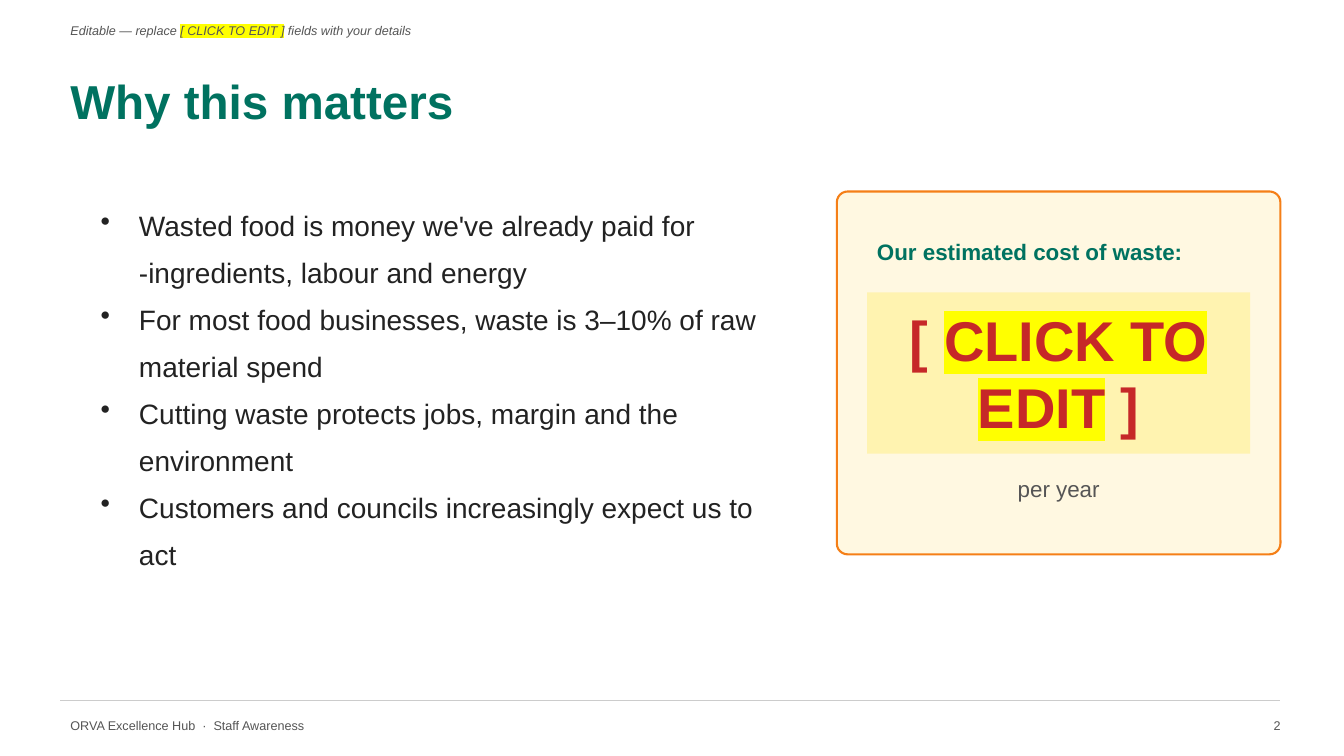
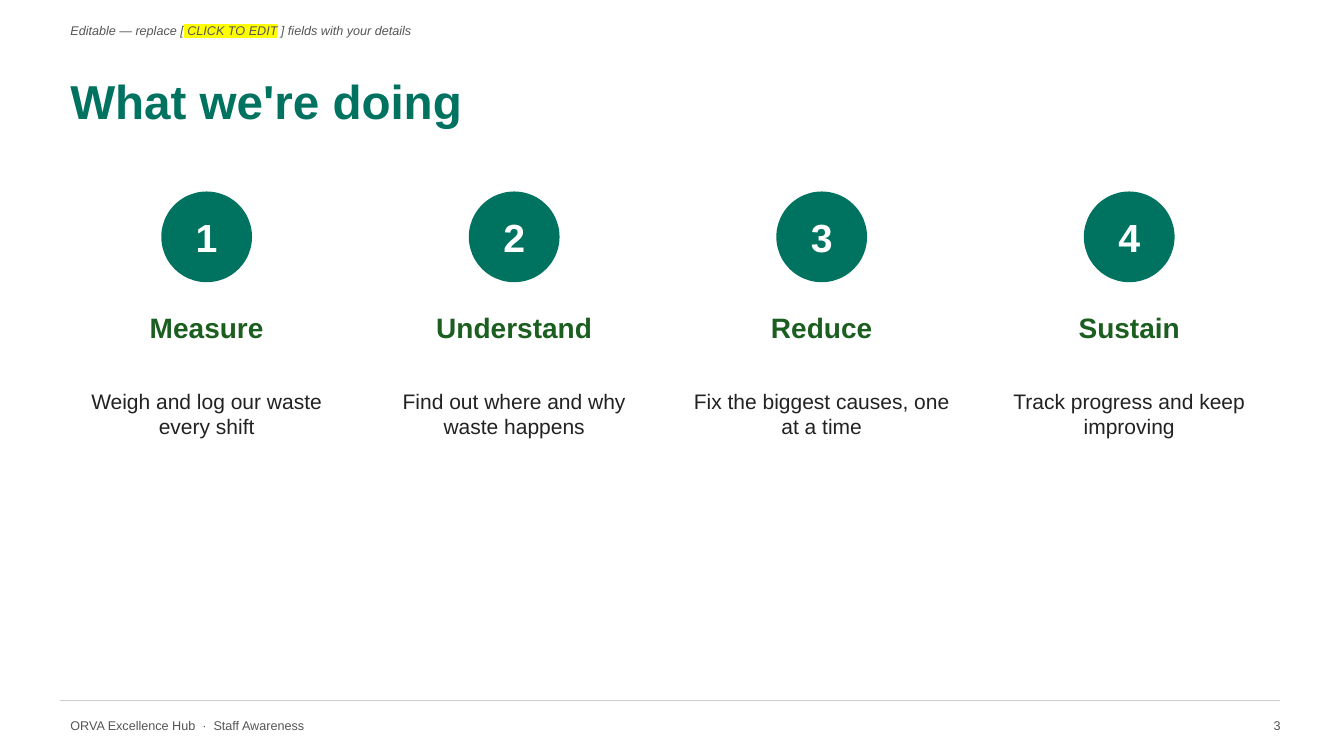
from dataclasses import dataclass

from lxml.etree import SubElement
from pptx import Presentation
from pptx.dml.color import RGBColor
from pptx.enum.shapes import MSO_CONNECTOR, MSO_SHAPE
from pptx.enum.text import MSO_ANCHOR, PP_ALIGN
from pptx.oxml.ns import qn
from pptx.util import Pt

EMU_PER_PX = 9144
SLIDE_SIZE = (1333, 750)
LEFT, RIGHT = 60, 1270


@dataclass(frozen=True)
class Theme:
    """Colours, font and type sizes shared by the slides."""

    font: str = "Arial"
    green: str = "007260"
    dark_green: str = "1B5E20"
    ink: str = "222222"
    grey: str = "555555"
    rule: str = "CCCCCC"
    white: str = "FFFFFF"
    orange: str = "F57F17"
    red: str = "C62828"
    cream: str = "FFF8E1"
    pale_yellow: str = "FFF3B0"
    marker: str = "FFFF00"
    small: int = 9
    body: int = 15
    label: int = 16
    large: int = 20
    number: int = 28
    title: int = 34
    figure: int = 40


THEME = Theme()
FOOTER = "ORVA Excellence Hub  ·  Staff Awareness"
REASONS = [
    "Wasted food is money we've already paid for -ingredients, labour and energy",
    "For most food businesses, waste is 3–10% of raw material spend",
    "Cutting waste protects jobs, margin and the environment",
    "Customers and councils increasingly expect us to act",
]
STEPS = [
    ("Measure", "Weigh and log our waste every shift"),
    ("Understand", "Find out where and why waste happens"),
    ("Reduce", "Fix the biggest causes, one at a time"),
    ("Sustain", "Track progress and keep improving"),
]


def px(*lengths):
    """Turn px lengths into a list of EMU."""
    return [round(length * EMU_PER_PX) for length in lengths]


def rgb(colour):
    """Turn a hex string into a colour."""
    return RGBColor.from_string(colour)


def add_highlight(run):
    """Put the marker colour behind a run that already has a font colour."""
    properties = run._r.get_or_add_rPr()
    highlight = SubElement(properties, qn("a:highlight"))
    SubElement(highlight, qn("a:srgbClr"), val=THEME.marker)
    properties.find(qn("a:solidFill")).addnext(highlight)


def add_bullet(paragraph):
    """Give a paragraph a hanging bullet."""
    properties = paragraph._p.get_or_add_pPr()
    indent = px(38)[0]
    properties.set("marL", str(indent))
    properties.set("indent", str(-indent))
    SubElement(properties, qn("a:buChar"), char="•")


def write(shape, *texts, size=THEME.body, colour=THEME.ink, bold=False, italic=False,
          align=PP_ALIGN.LEFT, spacing=None, bullets=False):
    """Write one paragraph per text; parts between bars are highlighted."""
    frame = shape.text_frame
    frame.word_wrap = True
    frame.vertical_anchor = MSO_ANCHOR.MIDDLE
    for index, text in enumerate(texts):
        paragraph = frame.add_paragraph() if index else frame.paragraphs[0]
        paragraph.alignment = align
        if spacing:
            paragraph.line_spacing = spacing
        if bullets:
            add_bullet(paragraph)
        for position, part in enumerate(text.split("|")):
            run = paragraph.add_run()
            run.text = part
            run.font.name = THEME.font
            run.font.size = Pt(size)
            run.font.bold = bold
            run.font.italic = italic
            run.font.color.rgb = rgb(colour)
            if position % 2:
                add_highlight(run)


def add_text(slide, box, *texts, **text_format):
    """Add a text box at a px box."""
    write(slide.shapes.add_textbox(*px(*box)), *texts, **text_format)


def add_panel(slide, kind, box, fill, line=None):
    """Add a flat filled shape, outlined if a line colour is given."""
    shape = slide.shapes.add_shape(kind, *px(*box))
    shape.shadow.inherit = False
    shape.fill.solid()
    shape.fill.fore_color.rgb = rgb(fill)
    if line:
        shape.line.color.rgb = rgb(line)
        shape.line.width = Pt(1.5)
    else:
        shape.line.fill.background()
    return shape


def add_rule(slide, y):
    """Add a thin line across the content width."""
    rule = slide.shapes.add_connector(MSO_CONNECTOR.STRAIGHT, *px(LEFT, y, RIGHT, y))
    rule.line.color.rgb = rgb(THEME.rule)
    rule.line.width = Pt(1)
    SubElement(rule._element.spPr, qn("a:effectLst"))


def add_slide(presentation, title, hint, number):
    """Add a slide with its hint, title and footer."""
    slide = presentation.slides.add_slide(presentation.slide_layouts[6])
    add_text(slide, (LEFT, 15, 800, 30), hint,
             size=THEME.small, colour=THEME.grey, italic=True)
    add_text(slide, (LEFT, 60, RIGHT - LEFT, 80), title,
             size=THEME.title, colour=THEME.green, bold=True)
    add_rule(slide, 695)
    footer_format = dict(size=THEME.small, colour=THEME.grey)
    add_text(slide, (LEFT, 700, 800, 40), FOOTER, **footer_format)
    add_text(slide, (1230, 700, 50, 40), str(number), align=PP_ALIGN.RIGHT, **footer_format)
    return slide


def add_cost_card(slide):
    """Add the card with the yearly cost of waste."""
    card = add_panel(slide, MSO_SHAPE.ROUNDED_RECTANGLE, (830, 190, 440, 360),
                     THEME.cream, THEME.orange)
    card.adjustments[0] = 0.03
    left, width = 860, 380
    add_text(slide, (left, 220, width, 60), "Our estimated cost of waste:",
             size=THEME.label, colour=THEME.green, bold=True)
    figure = add_panel(slide, MSO_SHAPE.RECTANGLE, (left, 290, width, 160), THEME.pale_yellow)
    write(figure, "[ |CLICK TO EDIT| ]", size=THEME.figure, colour=THEME.red,
          bold=True, align=PP_ALIGN.CENTER)
    add_text(slide, (left, 460, width, 50), "per year",
             size=THEME.label, colour=THEME.grey, align=PP_ALIGN.CENTER)


def add_step(slide, index, name, detail):
    """Add one numbered step column."""
    width, pitch, diameter = 290, 305, 90
    left = LEFT + index * pitch
    circle = add_panel(slide, MSO_SHAPE.OVAL,
                       (left + (width - diameter) // 2, 190, diameter, diameter), THEME.green)
    write(circle, str(index + 1), size=THEME.number, colour=THEME.white,
          bold=True, align=PP_ALIGN.CENTER)
    add_text(slide, (left, 300, width, 50), name, size=THEME.large,
             colour=THEME.dark_green, bold=True, align=PP_ALIGN.CENTER)
    add_text(slide, (left, 350, width, 120), detail, align=PP_ALIGN.CENTER)


def main():
    """Build and save the presentation."""
    presentation = Presentation()
    presentation.slide_width, presentation.slide_height = px(*SLIDE_SIZE)

    reasons = add_slide(presentation, "Why this matters",
                        "Editable — replace |[ CLICK TO EDIT ]| fields with your details", 2)
    add_text(reasons, (90, 180, 700, 400), *REASONS,
             size=THEME.large, spacing=1.4, bullets=True)
    add_cost_card(reasons)

    steps = add_slide(presentation, "What we're doing",
                      "Editable — replace [| CLICK TO EDIT| ] fields with your details", 3)
    for index, (name, detail) in enumerate(STEPS):
        add_step(steps, index, name, detail)

    presentation.save("out.pptx")


if __name__ == "__main__":
    main()
